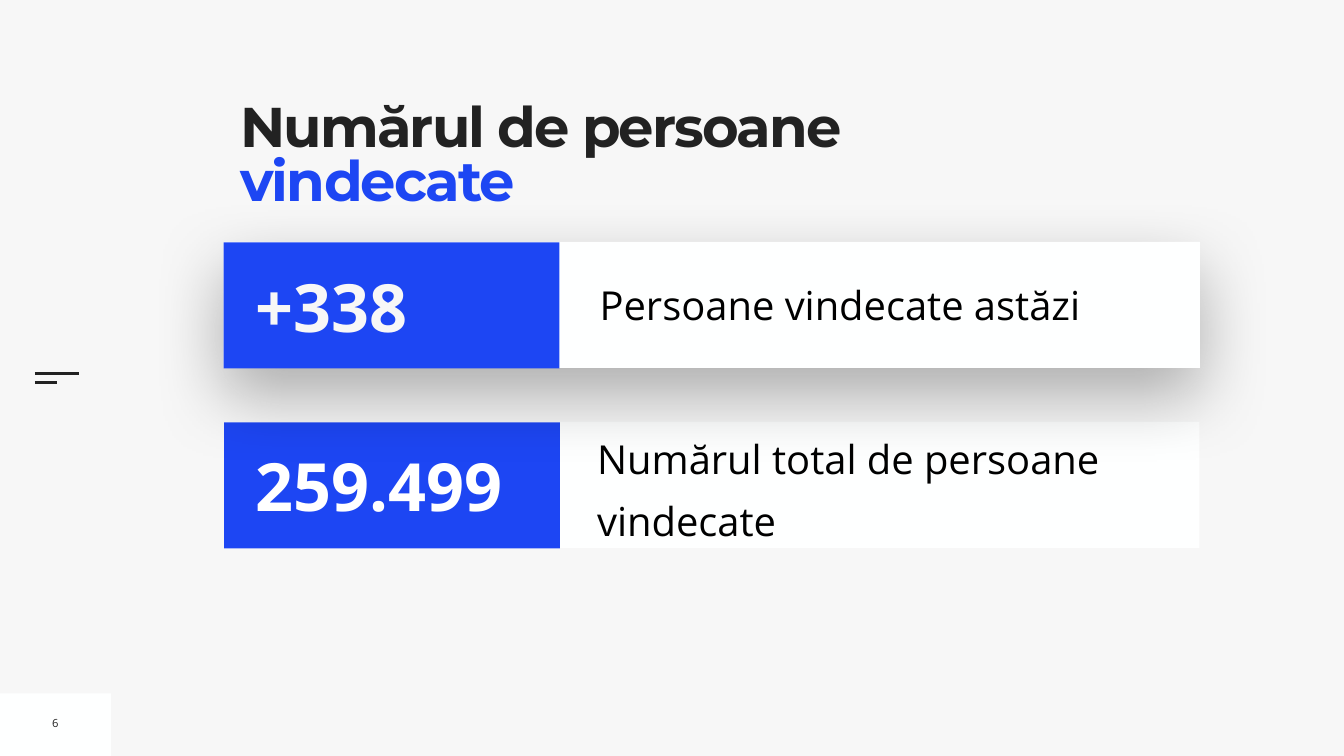
from lxml.etree import SubElement
from pptx import Presentation
from pptx.dml.color import RGBColor
from pptx.enum.shapes import MSO_CONNECTOR, MSO_SHAPE
from pptx.enum.text import MSO_ANCHOR, PP_ALIGN
from pptx.oxml.ns import qn
from pptx.util import Inches, Pt

BACKGROUND = RGBColor(0xF7, 0xF7, 0xF7)
WHITE = RGBColor(0xFE, 0xFF, 0xFF)
PURE_WHITE = RGBColor(0xFF, 0xFF, 0xFF)
BLUE = RGBColor(0x1D, 0x46, 0xF3)
DARK = RGBColor(0x22, 0x22, 0x22)
BLACK = RGBColor(0, 0, 0)

deck = Presentation()
deck.slide_width, deck.slide_height = Inches(26.67), Inches(15)
page = deck.slides.add_slide(deck.slide_layouts[6])
page.background.fill.solid()
page.background.fill.fore_color.rgb = BACKGROUND


def add_panel(place, color):
    panel = page.shapes.add_shape(MSO_SHAPE.RECTANGLE, *map(Inches, place))
    panel.shadow.inherit = False
    panel.fill.solid()
    panel.fill.fore_color.rgb = color
    panel.line.fill.background()
    return panel


def add_text(place, spans, size, font="Open Sans", bold=False, margin=0.1,
             anchor=MSO_ANCHOR.MIDDLE, wrap=True, **paragraph_format):
    box = page.shapes.add_textbox(*map(Inches, place))
    frame = box.text_frame
    frame.word_wrap = wrap
    frame.vertical_anchor = anchor
    for side in ("left", "top", "right", "bottom"):
        setattr(frame, f"margin_{side}", Inches(margin))
    para = frame.paragraphs[0]
    for name, value in paragraph_format.items():
        setattr(para, name, value)
    for text, color in spans:
        span = para.add_run()
        span.text = text
        for name, value in {"size": Pt(size), "name": font, "bold": bold}.items():
            setattr(span.font, name, value)
        span.font.color.rgb = color
    return box


# Page number corner
add_panel((0, 13.76, 2.2, 1.24), WHITE)
add_text((0.93, 14.09, 0.34, 0.51), [("6", DARK)], 16, wrap=False,
         alignment=PP_ALIGN.CENTER)

# Menu mark at the left edge
for top, right in ((7.41, 1.57), (7.59, 1.13)):
    line = page.shapes.add_connector(
        MSO_CONNECTOR.STRAIGHT, Inches(0.69), Inches(top), Inches(right), Inches(top))
    line.line.color.rgb = DARK
    line.line.width = Pt(3)
    SubElement(line._element.spPr, qn("a:effectLst"))

# Title
title = add_text((4.77, 2.07, 13.01, 2.73),
                 [("Numărul de persoane ", DARK), ("vindecate", BLUE)], 80,
                 font="Montserrat", bold=True, margin=0,
                 anchor=MSO_ANCHOR.TOP, line_spacing=0.8)
title.fill.solid()
title.fill.fore_color.rgb = BACKGROUND
for span in title.text_frame.paragraphs[0].runs:
    span.font._element.set("spc", "-270")

# Cards, the lower one first so that the upper one casts its shadow on it
cards = [
    (4.45, 8.37, 19.35, "259.499", PURE_WHITE, "Numărul total de persoane vindecate",
     (11.85, 8.39, 11.95, 2.36), {"margin": 0, "line_spacing": 1.3, "space_before": Pt(20)}),
    (4.44, 4.8, 19.37, "+338", BACKGROUND, "Persoane vindecate astăzi",
     (11.8, 5.47, 11.76, 1.16), {}),
]
for left, top, width, figure, figure_color, label, label_place, label_format in cards:
    card = add_panel((left, top, width, 2.5), WHITE)
    add_text(label_place, [(label, BLACK)], 57, **label_format)
    add_panel((left, top + 0.01, 6.66, 2.5), BLUE)
    add_text((left + 0.53, top + 0.36, 6.03, 1.8), [(figure, figure_color)], 95, bold=True)

# Soft shadow below the upper card
effects = card._element.spPr.find(qn("a:effectLst"))
shadow = SubElement(effects, qn("a:outerShdw"), blurRad=str(Pt(100)), dist=str(Pt(40)),
                    dir="5400000", rotWithShape="0")
shade = SubElement(shadow, qn("a:srgbClr"), val=str(BLACK))
SubElement(shade, qn("a:alpha"), val="30000")

deck.save("out.pptx")
